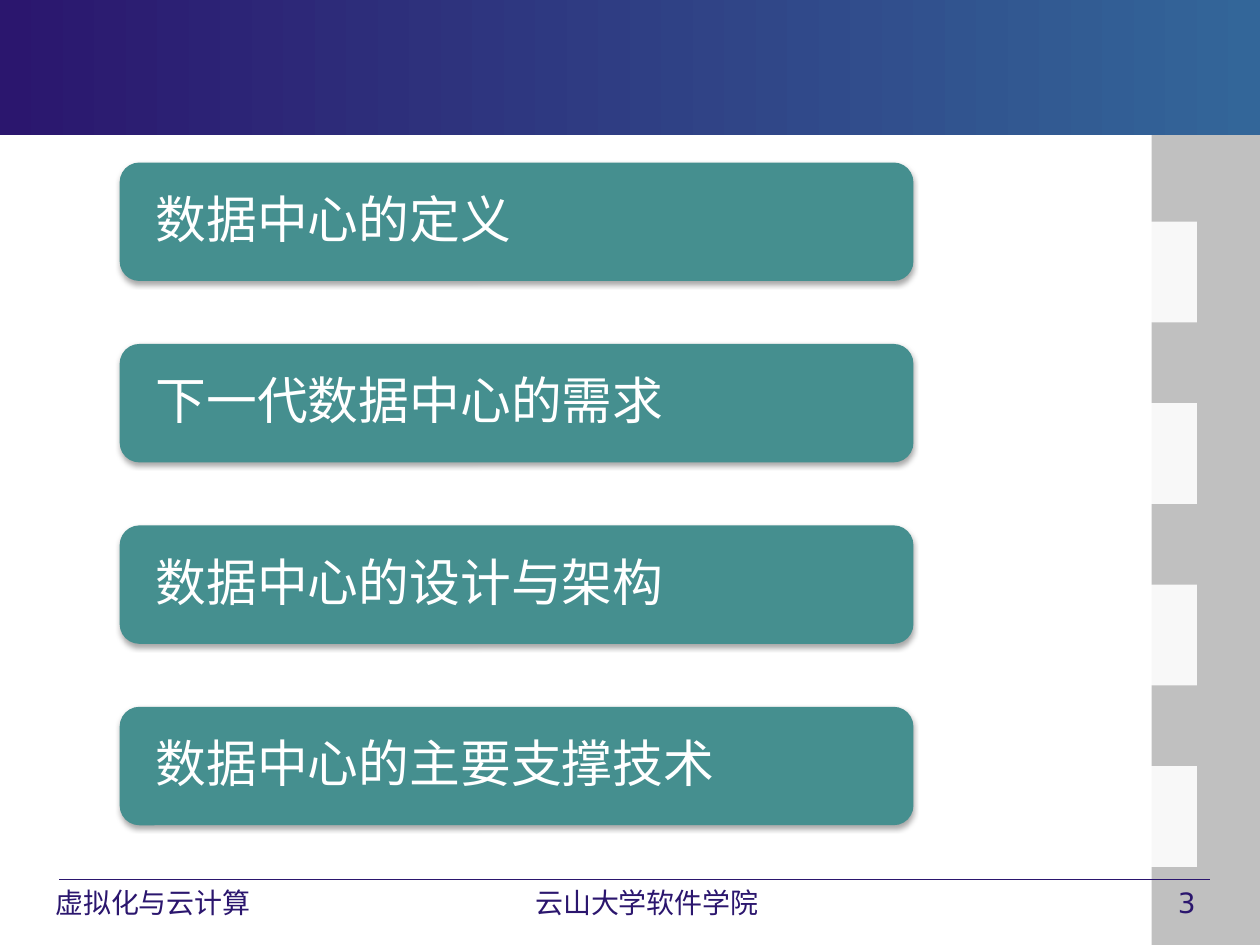
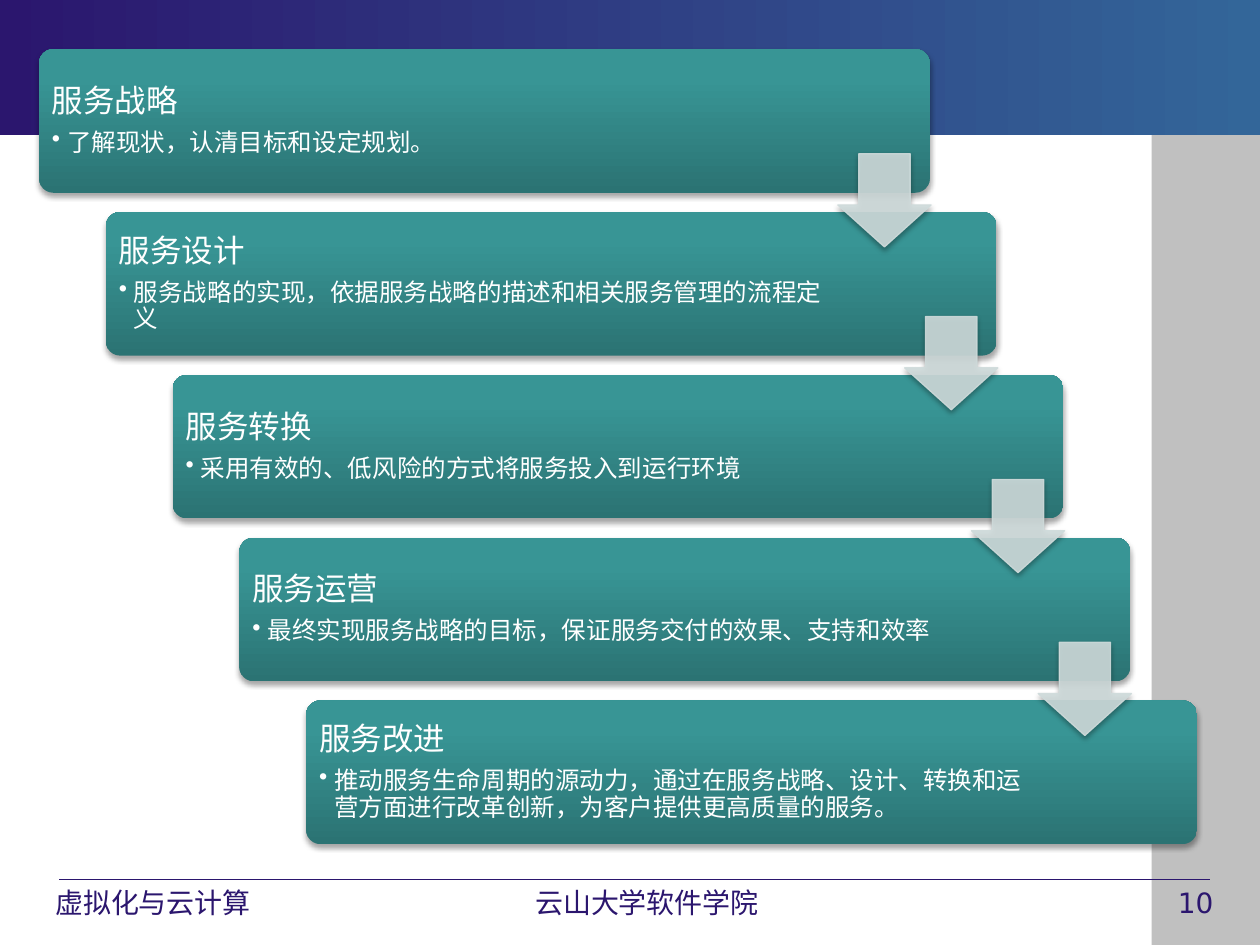
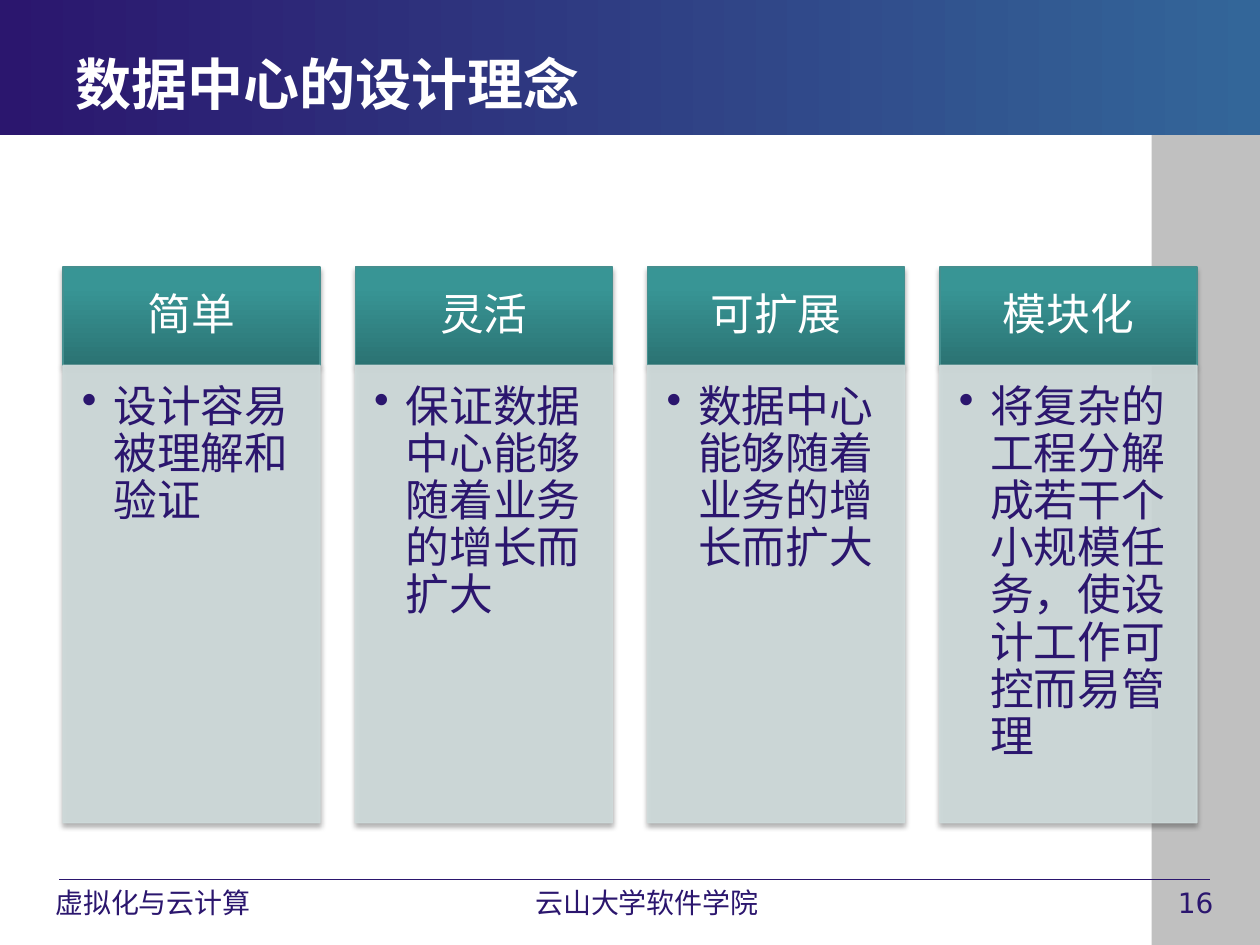
from lxml import etree
from pptx import Presentation
from pptx.dml.color import RGBColor
from pptx.enum.lang import MSO_LANGUAGE_ID
from pptx.enum.shapes import MSO_CONNECTOR, MSO_SHAPE
from pptx.enum.text import MSO_ANCHOR, PP_ALIGN
from pptx.oxml.ns import qn
from pptx.util import Inches, Pt

RECTANGLE = MSO_SHAPE.RECTANGLE
ROUNDED = MSO_SHAPE.ROUNDED_RECTANGLE
DOWN_ARROW = MSO_SHAPE.DOWN_ARROW
STRAIGHT = MSO_CONNECTOR.STRAIGHT
TOP, MIDDLE = MSO_ANCHOR.TOP, MSO_ANCHOR.MIDDLE
LEFT, CENTER = PP_ALIGN.LEFT, PP_ALIGN.CENTER
CHINESE = MSO_LANGUAGE_ID.SIMPLIFIED_CHINESE

FONT = "DejaVu Sans"
NAVY = RGBColor(0x2B, 0x16, 0x6E)
BLUE = RGBColor(0x33, 0x66, 0x99)
GRAY = RGBColor(0xC0, 0xC0, 0xC0)
WHITE = RGBColor(0xFF, 0xFF, 0xFF)
TEAL = RGBColor(0x45, 0x8F, 0x8F)
MIST = RGBColor(0xCF, 0xDB, 0xDB)
DEEP_TEAL = RGBColor(0x2B, 0x73, 0x73)
MID_TEAL = RGBColor(0x38, 0x95, 0x95)
BRIGHT_TEAL = RGBColor(0x37, 0x98, 0x98)

BANNER_GRADIENT = ([(0, NAVY), (100, BLUE)], 0)
TEAL_GRADIENT = ([(0, DEEP_TEAL), (80, MID_TEAL), (100, BRIGHT_TEAL)], 270)

WIDTH, HEIGHT = 10, 7.5
BANNER_HEIGHT = 1.07
SIDEBAR_WIDTH = 0.86
FOOTER_TOP, FOOTER_HEIGHT = 6.98, 0.35
MARGIN = 0.5
FOOTERS = [("虚拟化与云计算 ", 0.28, 1.94), ("云山大学软件学院", 4.01, 2.25)]

TOPICS = ["数据中心的定义", "下一代数据中心的需求", "数据中心的设计与架构", "数据中心的主要支撑技术"]
STAGES = [
    ("服务战略", "了解现状，认清目标和设定规划。"),
    ("服务设计", "服务战略的实现，依据服务战略的描述和相关服务管理的流程定义"),
    ("服务转换", "采用有效的、低风险的方式将服务投入到运行环境"),
    ("服务运营", "最终实现服务战略的目标，保证服务交付的效果、支持和效率"),
    ("服务改进", "推动服务生命周期的源动力，通过在服务战略、设计、转换和运营方面进行改革创新，为客户提供更高质量的服务。"),
]
PRINCIPLES_TITLE = "数据中心的设计理念"
PRINCIPLES = [
    ("简单", "设计容易被理解和验证"),
    ("灵活", "保证数据中心能够随着业务的增长而扩大"),
    ("可扩展", "数据中心能够随着业务的增长而扩大"),
    ("模块化", "将复杂的工程分解成若干个小规模任务，使设计工作可控而易管理"),
]


def add_node(parent, tag, **attributes):
    values = {name: str(value) for name, value in attributes.items()}
    return etree.SubElement(parent, qn(tag), values)


def set_alpha(fill_parent, percent):
    for color in fill_parent.iter(qn("a:srgbClr")):
        add_node(color, "a:alpha", val=percent * 1000)


def set_gradient(shape, stops, angle):
    properties = shape.fill._xPr
    solid = properties.find(qn("a:solidFill"))
    gradient = etree.Element(qn("a:gradFill"), {"rotWithShape": "1"})
    stop_list = add_node(gradient, "a:gsLst")
    for position, color in stops:
        stop = add_node(stop_list, "a:gs", pos=position * 1000)
        add_node(stop, "a:srgbClr", val=color)
    add_node(gradient, "a:lin", ang=angle * 60000, scaled=0)
    properties.replace(solid, gradient)


def add_block(page, kind, frame, color=TEAL, gradient=None, line=None, alpha=None, shadow=True):
    block = page.shapes.add_shape(kind, *map(Inches, frame))
    block.fill.solid()
    block.fill.fore_color.rgb = color
    if line is None:
        block.line.fill.background()
    else:
        block.line.color.rgb = line
        block.line.width = Pt(0.75)
    if alpha:
        set_alpha(block.fill._xPr, alpha)
    if gradient:
        set_gradient(block, *gradient)
    block.shadow.inherit = False
    if shadow:
        effects = block._element.spPr.find(qn("a:effectLst"))
        outer = add_node(effects, "a:outerShdw", blurRad=Pt(3.1), dist=Pt(1.8),
                         dir=90 * 60000, rotWithShape=0)
        add_node(add_node(outer, "a:srgbClr", val="000000"), "a:alpha", val=35000)
    return block


def set_frame(shape, insets=(0.1, 0.05, 0.1, 0.05), anchor=TOP):
    frame = shape.text_frame
    frame.word_wrap = True
    frame.vertical_anchor = anchor
    (frame.margin_left, frame.margin_top,
     frame.margin_right, frame.margin_bottom) = map(Inches, insets)
    return frame


def write(para, text, size, color, bold=False, align=LEFT):
    para.alignment = align
    span = para.add_run()
    span.text = text
    font = span.font
    font.name, font.size, font.bold = FONT, Pt(size), bold
    font.color.rgb = color
    font.language_id = CHINESE
    add_node(font._element, "a:ea", typeface=FONT)


def write_tight(para, text, size, color, align=LEFT, after=0.35, bullet_indent=None):
    write(para, text, size, color, align=align)
    para.line_spacing = 0.9
    para.space_after = Pt(round(size * after, 1))
    if bullet_indent:
        properties = para._p.get_or_add_pPr()
        properties.set("marL", str(Inches(bullet_indent)))
        properties.set("indent", str(-Inches(bullet_indent)))
        add_node(properties, "a:buChar", char="•")


def add_label(page, frame, text, size, color, bold=False, align=LEFT, anchor=TOP):
    box = page.shapes.add_textbox(*map(Inches, frame))
    write(set_frame(box, anchor=anchor).paragraphs[0], text, size, color, bold, align)


def add_page(deck, number):
    page = deck.slides.add_slide(deck.slide_layouts[6])
    add_block(page, RECTANGLE, (WIDTH - SIDEBAR_WIDTH, BANNER_HEIGHT, SIDEBAR_WIDTH,
                                HEIGHT - BANNER_HEIGHT), GRAY, shadow=False)
    rule = page.shapes.add_connector(
        STRAIGHT, *map(Inches, (0.47, FOOTER_TOP, 9.6, FOOTER_TOP)))
    rule.line.color.rgb = NAVY
    rule.line.width = Pt(0.75)
    add_node(rule._element.spPr, "a:effectLst")
    add_block(page, RECTANGLE, (0, 0, WIDTH, BANNER_HEIGHT),
              gradient=BANNER_GRADIENT, shadow=False)
    add_label(page, (9.25, FOOTER_TOP, 0.71, FOOTER_HEIGHT), str(number), 16, NAVY)
    for text, left, width in FOOTERS:
        add_label(page, (left, FOOTER_TOP, width, FOOTER_HEIGHT), text, 16, NAVY, align=CENTER)
    return page


def build_topics(deck):
    page = add_page(deck, 3)
    first_top, step = 1.29, 1.44
    for index, topic in enumerate(TOPICS):
        top = first_top + index * step
        add_block(page, RECTANGLE, (MARGIN, top + 0.47, WIDTH - 2 * MARGIN, 0.8),
                  WHITE, alpha=90, shadow=False)
        bar = add_block(page, ROUNDED, (0.95, top, 6.3, 0.94))
        frame = set_frame(bar, (0.24, 0, 0.24, 0), MIDDLE)
        write_tight(frame.paragraphs[0], topic, 29, WHITE)


def build_stages(deck):
    page = add_page(deck, 10)
    card_width, card_height, arrow_size = 7.07, 1.14, 0.74
    first_left, first_top, last_left, last_top = 0.31, 0.39, 2.43, 5.56
    gaps = len(STAGES) - 1
    corners = [(first_left + (last_left - first_left) * index / gaps,
                first_top + (last_top - first_top) * index / gaps)
               for index in range(len(STAGES))]
    for (left, top), (name, detail) in zip(corners, STAGES):
        card = add_block(page, ROUNDED, (left, top, card_width, card_height),
                         gradient=TEAL_GRADIENT)
        card.adjustments[0] = 0.1
        frame = set_frame(card, (0.07, 0.07, 1.35, 0.07), MIDDLE)
        write_tight(frame.paragraphs[0], name, 18, WHITE)
        write_tight(frame.add_paragraph(), detail, 14, WHITE, after=0.15, bullet_indent=0.12)
    for left, top in corners[:-1]:
        arrow = add_block(page, DOWN_ARROW, (left + 6.34, top + 0.83, arrow_size, arrow_size),
                          MIST, line=MIST, alpha=90)
        arrow.adjustments[0] = 0.55
        arrow.adjustments[1] = 0.45


def build_principles(deck):
    page = add_page(deck, 16)
    add_label(page, (MARGIN, 0.35, 6.75, 0.62), PRINCIPLES_TITLE, 32, WHITE,
              bold=True, anchor=MIDDLE)
    column_width, step = 2.04, 2.32
    head_top, body_top, body_height = 2.12, 2.9, 3.63
    for index, (name, detail) in enumerate(PRINCIPLES):
        left = MARGIN + index * step
        head = add_block(page, RECTANGLE, (left, head_top, column_width, body_top - head_top),
                         gradient=TEAL_GRADIENT, line=TEAL)
        frame = set_frame(head, (0.19, 0.11, 0.19, 0.11), MIDDLE)
        write_tight(frame.paragraphs[0], name, 25, WHITE, align=CENTER)
        body = add_block(page, RECTANGLE, (left, body_top, column_width, body_height),
                         MIST, line=MIST, alpha=90)
        frame = set_frame(body, (0.15, 0.15, 0.19, 0.22))
        write_tight(frame.paragraphs[0], detail, 25, NAVY, after=0.15, bullet_indent=0.25)


def main():
    deck = Presentation()
    deck.slide_width, deck.slide_height = Inches(WIDTH), Inches(HEIGHT)
    build_topics(deck)
    build_stages(deck)
    build_principles(deck)
    deck.save("out.pptx")


if __name__ == "__main__":
    main()
